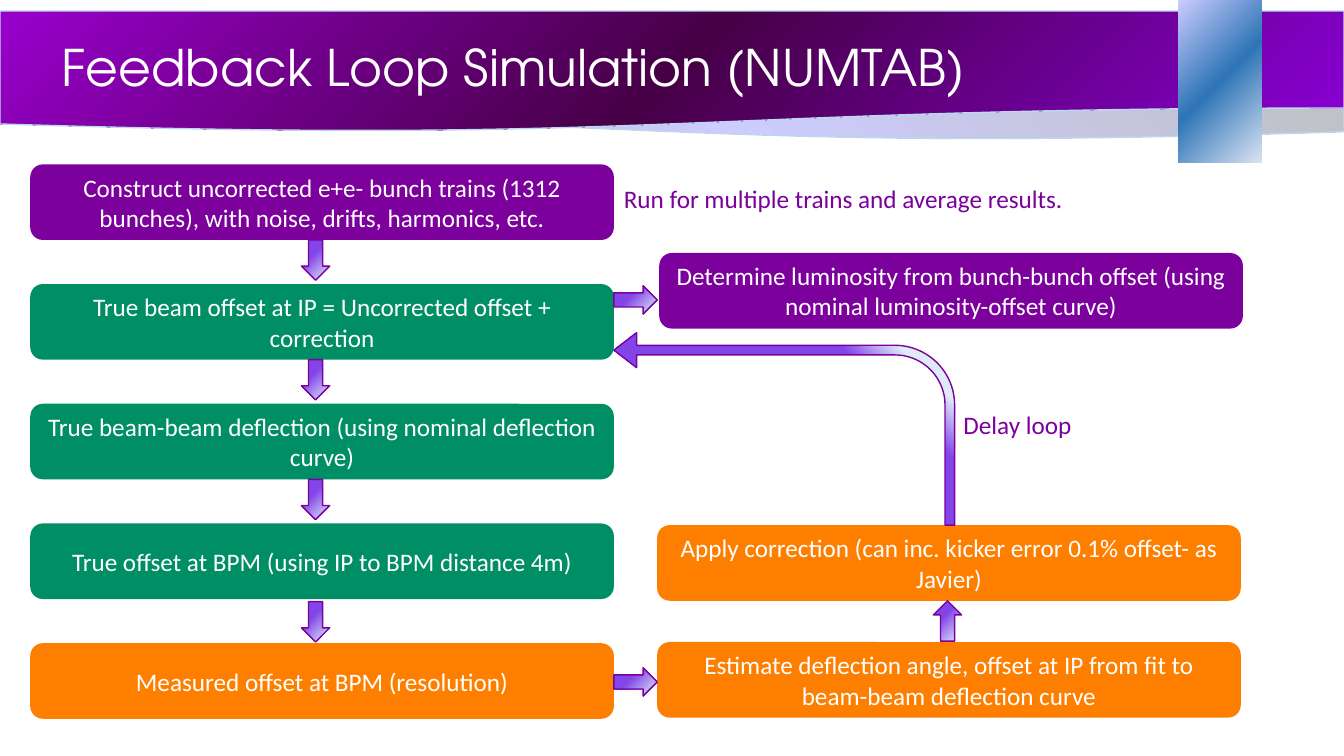
from pptx import Presentation
from pptx.dml.color import RGBColor
from pptx.enum.shapes import MSO_SHAPE
from pptx.enum.text import MSO_ANCHOR, PP_ALIGN
from pptx.oxml import parse_xml
from pptx.oxml.ns import nsdecls, qn
from pptx.util import Pt

WAVE = MSO_SHAPE.FLOWCHART_DOCUMENT
RECTANGLE = MSO_SHAPE.RECTANGLE
ROUNDED = MSO_SHAPE.ROUNDED_RECTANGLE
DOWN_ARROW = MSO_SHAPE.DOWN_ARROW
BENT_ARROW = MSO_SHAPE.BENT_ARROW
MIDDLE = MSO_ANCHOR.MIDDLE
TOP = MSO_ANCHOR.TOP
CENTER = PP_ALIGN.CENTER
LEFT = PP_ALIGN.LEFT

COLORS = {
    "white": "FFFFFF",
    "purple": "7B009C",
    "green": "008E65",
    "orange": "FE7F00",
    "pale_blue": "BDD7EE",
}
GRADIENTS = {
    "back_wave": [(0, "A6A6A6"), (50, "CCCCFF"), (100, "BFBFBF")],
    "front_wave": [(0, "8A00D6"), (50, "460046"), (100, "9900CC")],
    "ribbon": [(0, "DAE3F3"), (50, "2E75B6"), (100, "CCCCFF")],
    "arrow": [(3, "DEEBF7"), (62, "8345E8"), (92, "8345E8"), (100, "DEEBF7")],
    "delay": [(13, "DEEBF7"), (24, "8345E8"), (89, "8345E8")],
}
CORNER = '<a:path path="circle"><a:fillToRect l="100000" t="100000"/></a:path>'

BOX_WIDTH, BOX_HEIGHT = 416.9, 54
LEFT_COLUMN, RIGHT_COLUMN = 21.6, 469.4
FIRST_ROW, ROW_STEP = 117.4, 85.5
ARROW_WIDTH, ARROW_LENGTH, SIDE_LENGTH = 20.2, 28.8, 31

STEPS = [
    ("Construct uncorrected e+e- bunch trains (1312 bunches), "
     "with noise, drifts, harmonics, etc.", "purple"),
    ("True beam offset at IP = Uncorrected offset + correction", "green"),
    ("True beam-beam deflection (using nominal deflection curve)", "green"),
    ("True offset at BPM (using IP to BPM distance 4m)", "green"),
    ("Measured offset at BPM (resolution)", "orange"),
]
ARROW_GAPS = [0, 0, 0, 1.9]
OUTCOMES = [
    (470.9, 180.7, "Determine luminosity from bunch-bunch offset "
     "(using nominal luminosity-offset curve)", "purple"),
    (RIGHT_COLUMN, 375.1, "Apply correction (can inc. kicker error "
     "0.1% offset- as Javier)", "orange"),
    (RIGHT_COLUMN, 458.6, "Estimate deflection angle, offset at IP from fit "
     "to beam-beam deflection curve", "orange"),
]


def color(name):
    return RGBColor.from_string(COLORS[name])


def add_plain_shape(page, kind, left, top, width, height, line=None):
    shape = page.shapes.add_shape(kind, Pt(left), Pt(top), Pt(width), Pt(height))
    shape.shadow.inherit = False
    if line:
        shape.line.color.rgb = color(line)
        shape.line.width = Pt(1)
    else:
        shape.line.fill.background()
    return shape


def fill_gradient(shape, name, angle=None):
    stops = "".join(
        f'<a:gs pos="{position * 1000}"><a:srgbClr val="{value}"/></a:gs>'
        for position, value in GRADIENTS[name])
    shade = CORNER if angle is None else f'<a:lin ang="{angle * 60000}" scaled="0"/>'
    gradient = parse_xml(f'<a:gradFill {nsdecls("a")} rotWithShape="1">'
                         f'<a:gsLst>{stops}</a:gsLst>{shade}</a:gradFill>')
    shape.fill.background()
    properties = shape.element.spPr
    properties.replace(properties.find(qn("a:noFill")), gradient)


def flip(shape):
    shape.element.spPr.find(qn("a:xfrm")).set("flipH", "1")


def write(shape, text, name, size=18, font="Calibri", align=LEFT, anchor=TOP):
    frame = shape.text_frame
    frame.word_wrap = True
    frame.vertical_anchor = anchor
    para = frame.paragraphs[0]
    para.alignment = align
    span = para.add_run()
    span.text = text
    span.font.size = Pt(size)
    span.font.name = font
    span.font.color.rgb = color(name)
    return para


def add_label(page, left, top, width, height, text, name, **style):
    label = page.shapes.add_textbox(Pt(left), Pt(top), Pt(width), Pt(height))
    return write(label, text, name, **style)


def add_step(page, left, top, text, fill):
    box = add_plain_shape(page, ROUNDED, left, top, BOX_WIDTH, BOX_HEIGHT)
    box.fill.solid()
    box.fill.fore_color.rgb = color(fill)
    write(box, text, "white", align=CENTER, anchor=MIDDLE)


def add_arrow(page, left, top, length=ARROW_LENGTH, rotation=0):
    arrow = add_plain_shape(page, DOWN_ARROW, left, top, ARROW_WIDTH, length, "purple")
    fill_gradient(arrow, "arrow")
    arrow.rotation = rotation


def add_delay_arrow(page):
    arrow = add_plain_shape(page, BENT_ARROW, 438.5, 237.6, 243.4, 137.5, "purple")
    for index, value in enumerate([0.05, 0.091, 0.118, 0.31]):
        arrow.adjustments[index] = value
    flip(arrow)
    fill_gradient(arrow, "delay", 45)


def add_header(page):
    back = add_plain_shape(page, WAVE, 0, 9.4, 960, 90.7, "pale_blue")
    flip(back)
    fill_gradient(back, "back_wave", 225)
    front = add_plain_shape(page, WAVE, 0, 7.9, 960, 86.4, "pale_blue")
    fill_gradient(front, "front_wave", 225)
    ribbon = add_plain_shape(page, RECTANGLE, 841.7, 0, 59.4, 116.2)
    fill_gradient(ribbon, "ribbon")
    title = add_label(page, 36.7, 8.6, 828, 83.5, "Feedback Loop Simulation (NUMTAB)",
                      "white", size=36, font="TeX Gyre Adventor", anchor=MIDDLE)
    title.line_spacing = 0.9


def main():
    deck = Presentation()
    deck.slide_width, deck.slide_height = Pt(960), Pt(540)
    page = deck.slides.add_slide(deck.slide_layouts[6])
    add_header(page)
    for row, (text, fill) in enumerate(STEPS):
        add_step(page, LEFT_COLUMN, FIRST_ROW + row * ROW_STEP, text, fill)
    for row, gap in enumerate(ARROW_GAPS):
        add_arrow(page, 215.3, FIRST_ROW + row * ROW_STEP + BOX_HEIGHT + gap)
    for outcome in OUTCOMES:
        add_step(page, *outcome)
    add_arrow(page, 443.9, 198.7, SIDE_LENGTH, 270)
    add_arrow(page, 443.9, 471.6, SIDE_LENGTH, 270)
    add_arrow(page, 666.7, 429.1, rotation=180)
    add_delay_arrow(page)
    add_label(page, 438.5, 127.4, 330.5, 28.8,
              "Run for multiple trains and average results.", "purple")
    add_label(page, 681.1, 288.7, 121, 28.8, "Delay loop", "purple")
    deck.save("out.pptx")


if __name__ == "__main__":
    main()
